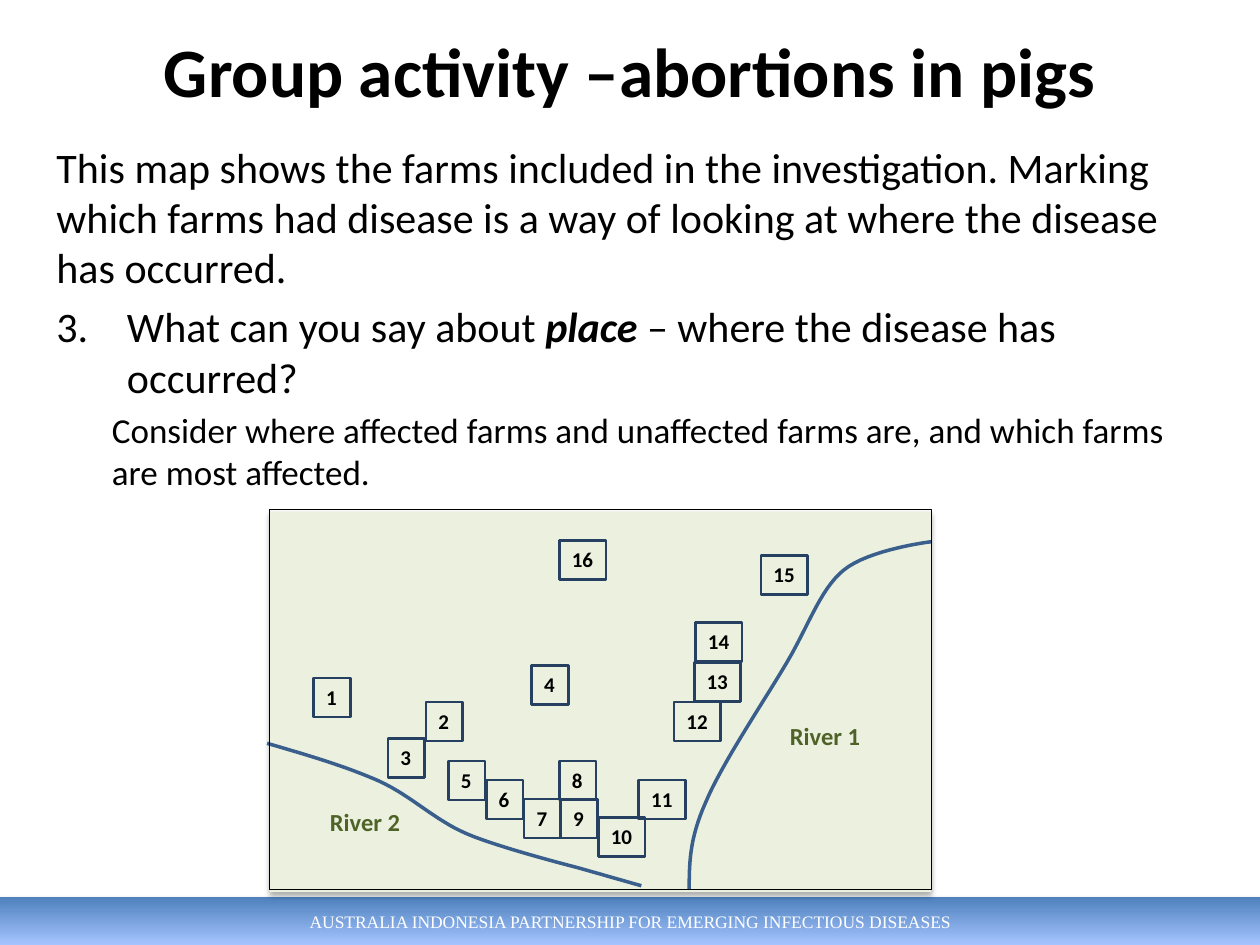
from lxml.etree import SubElement
from pptx import Presentation
from pptx.dml.color import RGBColor
from pptx.enum.shapes import MSO_SHAPE as Shape
from pptx.enum.text import MSO_ANCHOR as Anchor, MSO_AUTO_SIZE as AutoSize, PP_ALIGN as Align
from pptx.oxml.ns import qn
from pptx.util import Inches, Pt

BLACK = RGBColor(0x00, 0x00, 0x00)
WHITE = RGBColor(0xFF, 0xFF, 0xFF)
LAND = RGBColor(0xEB, 0xF1, 0xDE)
FARM_LINE = RGBColor(0x25, 0x40, 0x61)
RIVER = RGBColor(0x3A, 0x5F, 0x8C)
RIVER_NAME = RGBColor(0x4F, 0x62, 0x28)
BAND_TOP = RGBColor(0x4F, 0x81, 0xBD)
BAND_BOTTOM = RGBColor(0xA4, 0xC4, 0xFF)

TITLE = "Group activity –abortions in pigs"
FOOTER = "AUSTRALIA INDONESIA PARTNERSHIP FOR EMERGING INFECTIOUS DISEASES"
INTRO = ("This map shows the farms included in the investigation. Marking which farms "
         "had disease is a way of looking at where the disease has occurred.")
QUESTION = [("What can you say about ", False), ("place", True),
            (" – where the disease has occurred?", False)]
HINT = ("Consider where affected farms and unaffected farms are, "
        "and which farms are most affected.")
BODY = [
    dict(runs=[(INTRO, False)], size=24, before=0, left=0, indent=0, number=None),
    dict(runs=QUESTION, size=24, before=4.8, left=0.56, indent=-0.56, number=3),
    dict(runs=[(HINT, False)], size=20, before=4, left=0.44, indent=0, number=None),
]
FARMS = {
    1: (2.49, 5.38), 2: (3.38, 5.57), 3: (3.08, 5.86), 4: (4.22, 5.28),
    5: (3.56, 6.04), 6: (3.86, 6.19), 7: (4.16, 6.34), 8: (4.44, 6.04),
    9: (4.45, 6.34), 10: (4.75, 6.49), 11: (5.07, 6.19), 12: (5.35, 5.57),
    13: (5.51, 5.26), 14: (5.52, 4.94), 15: (6.04, 4.41), 16: (4.44, 4.29),
}
RIVERS = [
    ("River 1", (6.17, 5.67), (5.47, 7.06), [
        ((5.47, 6.86), (5.47, 6.66), (5.6, 6.37)),
        ((5.72, 6.08), (6.04, 5.6), (6.22, 5.3)),
        ((6.41, 4.99), (6.5, 4.69), (6.69, 4.53)),
        ((6.89, 4.36), (7.39, 4.3), (7.39, 4.3))]),
    ("River 2", (2.52, 6.36), (2.12, 5.9), [
        ((2.43, 5.99), (2.74, 6.08), (3.01, 6.2)),
        ((3.27, 6.32), (3.45, 6.51), (3.71, 6.62)),
        ((3.97, 6.73), (4.56, 6.88), (4.56, 6.88)),
        ((4.74, 6.93), (4.91, 6.98), (5.09, 7.03))]),
]
CURVE_STEPS = 16


def add_rect(page, left, top, width, height, fill=None, line=None, weight=1):
    box = page.shapes.add_shape(Shape.RECTANGLE, *map(Inches, (left, top, width, height)))
    box.shadow.inherit = False
    if fill is None:
        box.fill.background()
    else:
        box.fill.solid()
        box.fill.fore_color.rgb = fill
    if line is None:
        box.line.fill.background()
    else:
        box.line.color.rgb = line
        box.line.width = Pt(weight)
    return box


def add_shadow(box):
    effects = box._element.spPr.find(qn("a:effectLst"))
    shadow = SubElement(effects, qn("a:outerShdw"), blurRad=str(Pt(3.1)),
                        dist=str(Pt(1.8)), dir="5400000", rotWithShape="0")
    color = SubElement(shadow, qn("a:srgbClr"), val="000000")
    SubElement(color, qn("a:alpha"), val="35000")


def add_span(para, text, size, color=BLACK, bold=False, italic=False, font="Calibri"):
    span = para.add_run()
    span.text = text
    span.font.name = font
    span.font.size = Pt(size)
    span.font.bold = bold
    span.font.italic = italic
    span.font.color.rgb = color


def write_label(box, text, size, color):
    frame = box.text_frame
    frame.word_wrap = False
    frame.auto_size = AutoSize.SHAPE_TO_FIT_TEXT
    frame.vertical_anchor = Anchor.TOP
    para = frame.paragraphs[0]
    para.alignment = Align.LEFT
    add_span(para, text, size, color, bold=True)


def add_text_box(page, left, top, width, height):
    box = page.shapes.add_textbox(*map(Inches, (left, top, width, height)))
    box.text_frame.word_wrap = True
    return box


def curve_points(start, curves):
    points = [start]
    for first, second, end in curves:
        for step in range(1, CURVE_STEPS + 1):
            t = step / CURVE_STEPS
            weights = ((1 - t) ** 3, 3 * t * (1 - t) ** 2, 3 * t * t * (1 - t), t ** 3)
            points.append(tuple(sum(w * p[axis] for w, p in
                                    zip(weights, (start, first, second, end)))
                                for axis in (0, 1)))
        start = end
    return points


def add_river(page, start, curves):
    points = [(Inches(x), Inches(y)) for x, y in curve_points(start, curves)]
    builder = page.shapes.build_freeform(*points[0])
    builder.add_line_segments(points[1:], close=False)
    river = builder.convert_to_shape()
    river.shadow.inherit = False
    river.fill.background()
    river.line.color.rgb = RIVER
    river.line.width = Pt(2)


def add_footer(page):
    band = add_rect(page, 0, 7.12, 10, 0.38)
    band.fill.gradient()
    band.fill.gradient_angle = 270
    for stop, position, color in zip(band.fill.gradient_stops, (0, 1), (BAND_TOP, BAND_BOTTOM)):
        stop.position = position
        stop.color.rgb = color
    add_shadow(band)
    band.text_frame.vertical_anchor = Anchor.MIDDLE
    para = band.text_frame.paragraphs[0]
    para.alignment = Align.CENTER
    add_span(para, FOOTER, 10, WHITE, font="Times New Roman")


def add_title(page):
    frame = add_text_box(page, 0.5, 0.21, 9, 0.69).text_frame
    frame.vertical_anchor = Anchor.MIDDLE
    para = frame.paragraphs[0]
    para.alignment = Align.CENTER
    add_span(para, TITLE, 39.6, bold=True)


def add_body(page):
    frame = add_text_box(page, 0.35, 1.07, 9, 4.95).text_frame
    for index, item in enumerate(BODY):
        para = frame.paragraphs[0] if index == 0 else frame.add_paragraph()
        para.space_before = Pt(item["before"])
        props = para._p.get_or_add_pPr()
        props.set("marL", str(Inches(item["left"])))
        props.set("indent", str(Inches(item["indent"])))
        if item["number"]:
            SubElement(props, qn("a:buFont"), typeface="+mj-lt")
            SubElement(props, qn("a:buAutoNum"), type="arabicPeriod",
                       startAt=str(item["number"]))
        for text, strong in item["runs"]:
            add_span(para, text, item["size"], bold=strong, italic=strong)


def add_map(page):
    for number, (left, top) in FARMS.items():
        width = 0.29 if number < 10 else 0.37
        farm = add_rect(page, left, top, width, 0.31, line=FARM_LINE, weight=1.5)
        write_label(farm, str(number), 12, BLACK)
    for name, (left, top), start, curves in RIVERS:
        add_river(page, start, curves)
        label = add_text_box(page, left, top, 0.77, 0.34)
        write_label(label, name, 14, RIVER_NAME)
    add_rect(page, 2.14, 4.04, 5.25, 3.02, line=BLACK, weight=0.25)


def main():
    deck = Presentation()
    deck.slide_width, deck.slide_height = Inches(10), Inches(7.5)
    page = deck.slides.add_slide(deck.slide_layouts[6])
    add_footer(page)
    add_shadow(add_rect(page, 2.14, 4.06, 5.25, 3.02, fill=LAND))
    add_title(page)
    add_body(page)
    add_map(page)
    deck.save("out.pptx")


if __name__ == "__main__":
    main()
